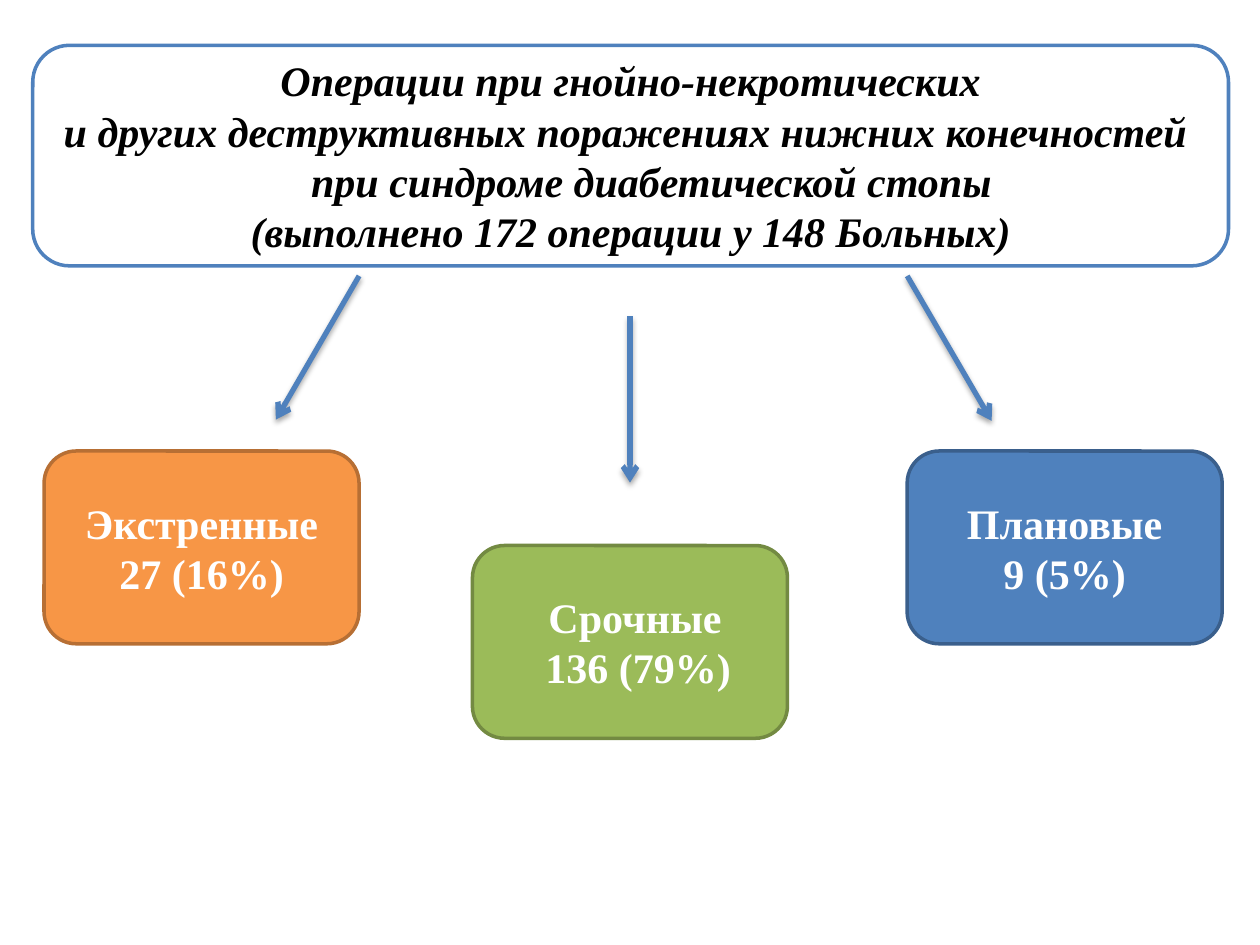
import lxml.etree
import pptx
import pptx.dml.color
import pptx.enum.shapes
import pptx.enum.text
import pptx.oxml
import pptx.oxml.ns
import pptx.util

Inches = pptx.util.Inches
RGBColor = pptx.dml.color.RGBColor

WHITE = RGBColor(0xFF, 0xFF, 0xFF)
BLACK = RGBColor(0x00, 0x00, 0x00)
BLUE = RGBColor(0x4F, 0x81, 0xBD)
DARK_BLUE = RGBColor(0x3A, 0x5F, 0x8C)
ORANGE = RGBColor(0xF7, 0x96, 0x46)
DARK_ORANGE = RGBColor(0xB7, 0x6F, 0x34)
GREEN = RGBColor(0x9B, 0xBB, 0x59)
DARK_GREEN = RGBColor(0x73, 0x8A, 0x42)

ARROW_SHADOW = (
    f'<a:effectLst {pptx.oxml.ns.nsdecls("a")}>'
    '<a:outerShdw blurRad="40000" dist="23000" dir="5400000" rotWithShape="0">'
    '<a:srgbClr val="000000"><a:alpha val="35000"/></a:srgbClr>'
    '</a:outerShdw></a:effectLst>'
)

deck = pptx.Presentation()
deck.slide_width = Inches(10)
deck.slide_height = Inches(7.5)
page = deck.slides.add_slide(deck.slide_layouts[6])


def add_rounded_box(left, top, width, height, fill, outline, color, lines, italic=False):
    """Draw a rounded box; each line is a text and its left indent in inches."""
    box = page.shapes.add_shape(
        pptx.enum.shapes.MSO_SHAPE.ROUNDED_RECTANGLE,
        Inches(left), Inches(top), Inches(width), Inches(height))
    box.shadow.inherit = False
    box.fill.solid()
    box.fill.fore_color.rgb = fill
    box.line.color.rgb = outline
    box.line.width = pptx.util.Pt(2)
    frame = box.text_frame
    frame.word_wrap = True
    frame.vertical_anchor = pptx.enum.text.MSO_ANCHOR.MIDDLE
    for index, (text, indent) in enumerate(lines):
        para = frame.add_paragraph() if index else frame.paragraphs[0]
        para.text = text
        para.alignment = pptx.enum.text.PP_ALIGN.CENTER
        para.font.name = "Times New Roman"
        para.font.size = pptx.util.Pt(24)
        para.font.bold = True
        para.font.italic = italic
        para.font.color.rgb = color
        if indent:
            para._p.get_or_add_pPr().set("marL", str(Inches(indent)))


# Kinds of operation
kinds = [
    (0.35, 3.58, ORANGE, DARK_ORANGE, [("Экстренные", 0), ("27 (16%)", 0)]),
    (3.75, 4.33, GREEN, DARK_GREEN, [("Срочные", 0.08), ("136 (79%)", 0.13)]),
    (7.2, 3.58, BLUE, DARK_BLUE, [("Плановые", 0), ("9 (5%)", 0)]),
]
for left, top, fill, outline, lines in kinds:
    add_rounded_box(left, top, 2.5, 1.53, fill, outline, WHITE, lines)

# Arrows from the heading to the kinds
arrows = [(5, 2.51, 5, 3.83), (2.85, 2.19, 2.19, 3.33), (7.2, 2.19, 7.87, 3.34)]
for start_x, start_y, end_x, end_y in arrows:
    arrow = page.shapes.add_connector(
        pptx.enum.shapes.MSO_CONNECTOR.STRAIGHT,
        Inches(start_x), Inches(start_y), Inches(end_x), Inches(end_y))
    arrow.line.color.rgb = BLUE
    arrow.line.width = pptx.util.Pt(3)
    head = lxml.etree.SubElement(arrow.line._get_or_add_ln(), pptx.oxml.ns.qn("a:tailEnd"))
    head.set("type", "arrow")
    arrow._element.spPr.append(pptx.oxml.parse_xml(ARROW_SHADOW))

# Heading
heading = [
    ("Операции при гнойно-некротических", 0),
    ("и других деструктивных поражениях нижних конечностей ", 0),
    ("при синдроме диабетической стопы", 0.33),
    ("(выполнено 172 операции у 148 Больных)", 0),
]
add_rounded_box(0.26, 0.36, 9.49, 1.75, WHITE, BLUE, BLACK, heading, italic=True)

deck.save("out.pptx")
